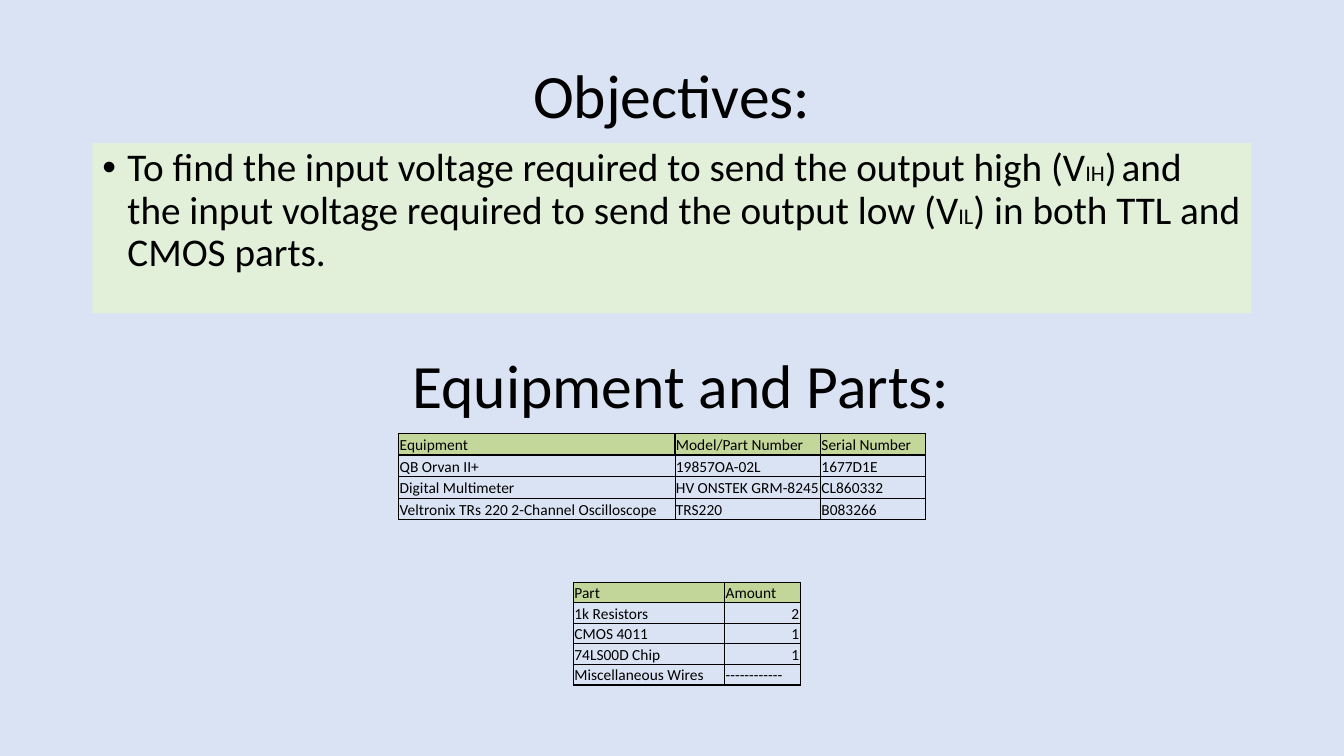
from lxml.etree import SubElement
from pptx import Presentation
from pptx.dml.color import RGBColor
from pptx.enum.shapes import MSO_SHAPE as Shape
from pptx.enum.text import MSO_ANCHOR as Anchor, MSO_AUTO_SIZE as Fit, PP_ALIGN as Align
from pptx.oxml.ns import qn
from pptx.util import Pt

BLACK = RGBColor(0, 0, 0)
SKY = RGBColor(0xDA, 0xE3, 0xF3)
MINT = RGBColor(0xE2, 0xF0, 0xD9)
OLIVE = RGBColor(0xC4, 0xD7, 0x9B)
MOSS = RGBColor(0xC2, 0xD6, 0x9A)


class Page:
    font = "Calibri"
    head, main, sub, small = 44, 28, 16, 11

    def __init__(self, deck):
        self.slide = deck.slides.add_slide(deck.slide_layouts[5])
        fill = self.slide.background.fill
        fill.solid()
        fill.fore_color.rgb = SKY

    def run(self, para, text, size):
        run = para.add_run()
        run.text = text
        run.font.name = self.font
        run.font.size = Pt(size)
        run.font.color.rgb = BLACK

    def heading(self, shape, text, left, top):
        shape.left, shape.top = Pt(left), Pt(top)
        shape.width, shape.height = Pt(828), Pt(104.4)
        frame = shape.text_frame
        frame.word_wrap = True
        frame.auto_size = Fit.NONE
        frame.vertical_anchor = Anchor.MIDDLE
        para = frame.paragraphs[0]
        para.alignment = Align.CENTER
        para.line_spacing = 0.9
        self.run(para, text, self.head)

    def title(self, text, left, top):
        self.heading(self.slide.shapes.title, text, left, top)

    def label(self, text, left, top):
        box = self.slide.shapes.add_textbox(0, 0, 0, 0)
        self.heading(box, text, left, top)

    def bullet(self, parts, *box):
        shape = self.slide.shapes.add_shape(Shape.RECTANGLE, *map(Pt, box))
        shape.shadow.inherit = False
        shape.fill.solid()
        shape.fill.fore_color.rgb = MINT
        shape.line.fill.background()
        frame = shape.text_frame
        frame.word_wrap = True
        frame.vertical_anchor = Anchor.TOP
        para = frame.paragraphs[0]
        para.alignment = Align.LEFT
        para.line_spacing = 0.9
        para.space_before = Pt(10)
        # Hanging bullet
        props = para._p.get_or_add_pPr()
        props.set("marL", str(Pt(18)))
        props.set("indent", str(-Pt(18)))
        SubElement(props, qn("a:buFont"), typeface="Arial")
        SubElement(props, qn("a:buChar"), char="•")
        for text, size in parts:
            self.run(para, text, size)

    def border(self, cell, sides):
        props = cell._tc.get_or_add_tcPr()
        for side, width in zip("LRTB", sides):
            line = SubElement(props, qn("a:ln" + side), w=str(Pt(width)))
            fill = SubElement(line, qn("a:solidFill"))
            SubElement(fill, qn("a:srgbClr"), val=str(BLACK))

    def table(self, data, left, top, widths, height, tint, rule):
        """Draw a grid; rule is the line weight under the header."""
        rows, cols = len(data), len(widths)
        table = self.slide.shapes.add_table(
            rows, cols, Pt(left), Pt(top), Pt(sum(widths)), Pt(height * rows)).table
        table.first_row = table.horz_banding = False
        for col, width in zip(table.columns, widths):
            col.width = Pt(width)
        # Line weights: thick outside and between header cells, thin inside
        level = [1, rule] + [0.5] * (rows - 2) + [1]
        for r, line in enumerate(data):
            table.rows[r].height = Pt(height)
            inner = 0.5 if r else 1
            upright = [1] + [inner] * (cols - 1) + [1]
            for c, text in enumerate(line):
                cell = table.cell(r, c)
                cell.margin_left = cell.margin_right = cell.margin_top = Pt(0.72)
                cell.margin_bottom = 0
                cell.vertical_anchor = Anchor.BOTTOM
                self.border(cell, upright[c:c + 2] + level[r:r + 2])
                if r:
                    cell.fill.background()
                else:
                    cell.fill.solid()
                    cell.fill.fore_color.rgb = tint
                para = cell.text_frame.paragraphs[0]
                para.alignment = Align.RIGHT if text.isdigit() else Align.LEFT
                self.run(para, text, self.small)


def main():
    deck = Presentation()
    deck.slide_width, deck.slide_height = Pt(960), Pt(540)
    page = Page(deck)

    # Objectives
    page.title("Objectives:", 66, 18)
    page.bullet([
        ("To find the input voltage required to send the output high (V", page.main),
        ("IH", page.sub), (")", page.main), (" ", page.sub),
        ("and the input voltage required to send the output low (V", page.main),
        ("IL", page.sub), (") in both TTL and CMOS parts.", page.main),
    ], 66, 102.2, 828, 121.7)

    # Equipment and parts
    page.label("Equipment and Parts:", 72.7, 225.4)
    page.table([
        ("Equipment", "Model/Part Number", "Serial Number"),
        ("QB Orvan II+", "19857OA-02L", "1677D1E"),
        ("Digital Multimeter", "HV ONSTEK GRM-8245", "CL860332"),
        ("Veltronix TRs 220 2-Channel Oscilloscope", "TRS220", "B083266"),
    ], 284.8, 309.6, (197.3, 104, 75), 15.4, OLIVE, 1)
    page.table([
        ("Part", "Amount"),
        ("1k Resistors", "2"),
        ("CMOS 4011", "1"),
        ("74LS00D Chip", "1"),
        ("Miscellaneous Wires", "------------"),
    ], 409.6, 415.8, (108, 54), 14.7, MOSS, 0.5)

    deck.save("out.pptx")


if __name__ == "__main__":
    main()
